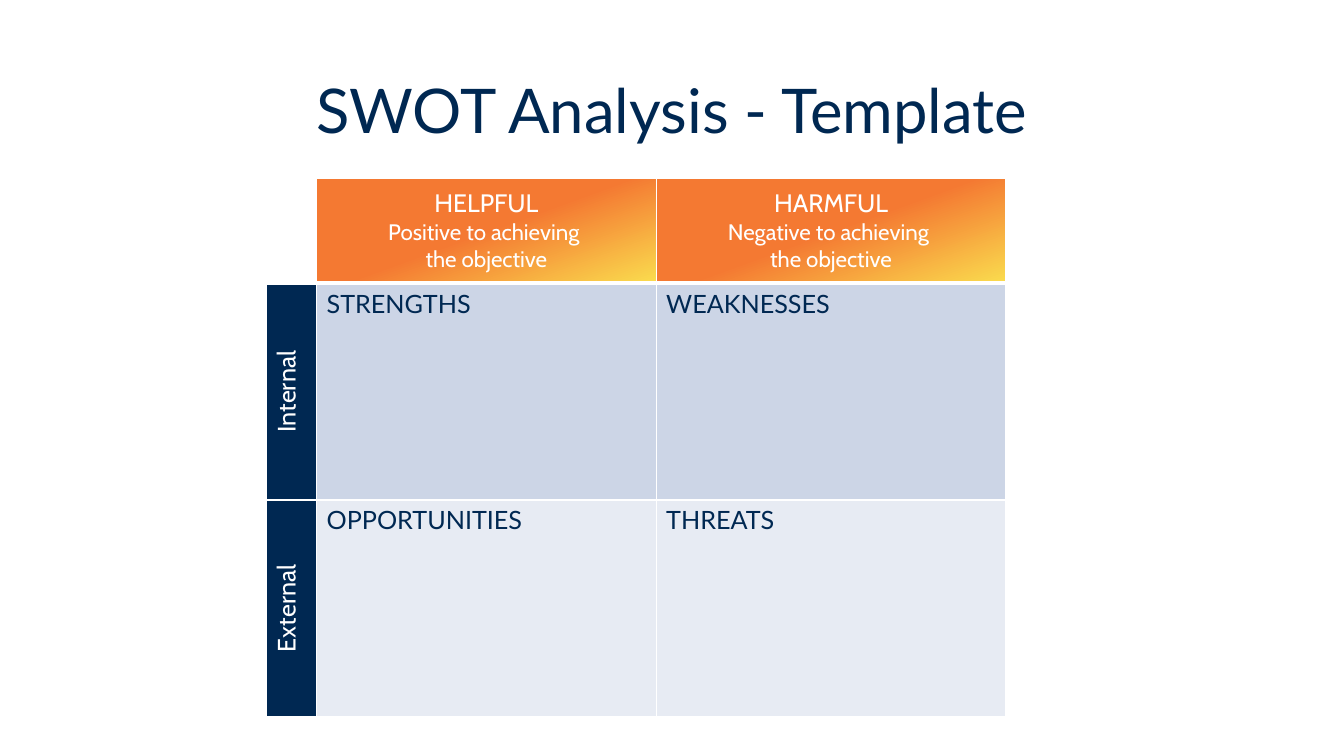
from copy import deepcopy

from pptx import Presentation
from pptx.dml.color import RGBColor
from pptx.enum.text import MSO_ANCHOR, PP_ALIGN
from pptx.oxml import parse_xml
from pptx.oxml.ns import nsdecls, qn
from pptx.util import Pt

NAVY = RGBColor(0x00, 0x28, 0x52)
WHITE = RGBColor(0xFF, 0xFF, 0xFF)
ORANGE = RGBColor(0xF4, 0x79, 0x32)
YELLOW = RGBColor(0xFA, 0xDC, 0x4E)
BLUE_GREY = RGBColor(0xCC, 0xD5, 0xE6)
PALE_GREY = RGBColor(0xE7, 0xEB, 0xF3)

COLUMN_WIDTHS = (36, 242.6, 249.8)
ROW_HEIGHTS = (74.9, 154.8, 154.8)
HEADINGS = (
    ("HELPFUL", "Positive to achieving \nthe objective"),
    ("HARMFUL", "Negative to achieving \nthe objective"),
)
ROWS = (
    ("Internal", ("STRENGTHS", "WEAKNESSES"), BLUE_GREY),
    ("External", ("OPPORTUNITIES", "THREATS"), PALE_GREY),
)


def write(paragraph, text, *, size=18, font="Lato", color=NAVY,
          align=PP_ALIGN.LEFT, line_spacing=None):
    """Write formatted text, with line breaks, into a paragraph."""
    paragraph.text = text
    paragraph.alignment = align
    if line_spacing:
        paragraph.line_spacing = line_spacing
    for run in paragraph.runs:
        run.font.size = Pt(size)
        run.font.name = font
        run.font.color.rgb = color
    for line_break in paragraph._p.findall(qn("a:br")):
        line_break.insert(0, deepcopy(paragraph.runs[0]._r.rPr))


def add_title(slide, text):
    """Place and format the slide title."""
    title = slide.shapes.title
    title.left, title.top, title.width, title.height = (
        Pt(66), Pt(28.8), Pt(828), Pt(104.4))
    title.text_frame.vertical_anchor = MSO_ANCHOR.MIDDLE
    write(title.text_frame.paragraphs[0], text, size=44,
          align=PP_ALIGN.CENTER, line_spacing=0.9)


def set_borders(cell, top=1, bottom=1):
    """Give a cell white borders with the chosen top and bottom widths."""
    properties = cell._tc.get_or_add_tcPr()
    for side, width in (("L", 1), ("R", 1), ("T", top), ("B", bottom)):
        properties.append(parse_xml(
            f'<a:ln{side} {nsdecls("a")} w="{Pt(width)}"><a:solidFill>'
            f'<a:srgbClr val="{WHITE}"/></a:solidFill></a:ln{side}>'))


def fill_solid(cell, color):
    """Fill a cell with one colour."""
    cell.fill.solid()
    cell.fill.fore_color.rgb = color


def fill_heading(cell, heading, description):
    """Write a column heading on an orange to yellow gradient."""
    cell.fill.gradient()
    cell.fill.gradient_angle = 290
    stops = ((0.5, ORANGE), (1, YELLOW))
    for stop, (position, color) in zip(cell.fill.gradient_stops, stops):
        stop.position = position
        stop.color.rgb = color
    cell.vertical_anchor = MSO_ANCHOR.MIDDLE
    look = {"font": "Cabin", "color": WHITE, "align": PP_ALIGN.CENTER}
    write(cell.text_frame.paragraphs[0], heading, **look)
    write(cell.text_frame.add_paragraph(), description, size=16, **look)


def fill_side_label(cell, text):
    """Write a row label that reads upwards on navy."""
    fill_solid(cell, NAVY)
    cell.vertical_anchor = MSO_ANCHOR.MIDDLE
    cell._tc.get_or_add_tcPr().set("vert", "vert270")
    write(cell.text_frame.paragraphs[0], text, font="Cabin", color=WHITE,
          align=PP_ALIGN.CENTER)


def add_swot_table(slide):
    """Add the SWOT grid with its headings and row labels."""
    table = slide.shapes.add_table(
        len(ROW_HEIGHTS), len(COLUMN_WIDTHS), Pt(190.1), Pt(127.4),
        Pt(sum(COLUMN_WIDTHS)), Pt(sum(ROW_HEIGHTS))).table
    table.first_row = table.horz_banding = False
    for column, width in zip(table.columns, COLUMN_WIDTHS):
        column.width = Pt(width)
    for index, (row, height) in enumerate(zip(table.rows, ROW_HEIGHTS)):
        row.height = Pt(height)
        for cell in row.cells:
            set_borders(cell, top=3 if index == 1 else 1,
                        bottom=3 if index == 0 else 1)

    fill_solid(table.cell(0, 0), WHITE)
    for column, heading in enumerate(HEADINGS, 1):
        fill_heading(table.cell(0, column), *heading)
    for row, (label, quadrants, color) in enumerate(ROWS, 1):
        fill_side_label(table.cell(row, 0), label)
        for column, quadrant in enumerate(quadrants, 1):
            cell = table.cell(row, column)
            fill_solid(cell, color)
            write(cell.text_frame.paragraphs[0], quadrant)


def main():
    """Build and save the SWOT slide."""
    presentation = Presentation()
    presentation.slide_width = Pt(960)
    presentation.slide_height = Pt(540)
    slide = presentation.slides.add_slide(presentation.slide_layouts[5])
    add_title(slide, "SWOT Analysis - Template")
    add_swot_table(slide)
    presentation.save("out.pptx")


if __name__ == "__main__":
    main()
